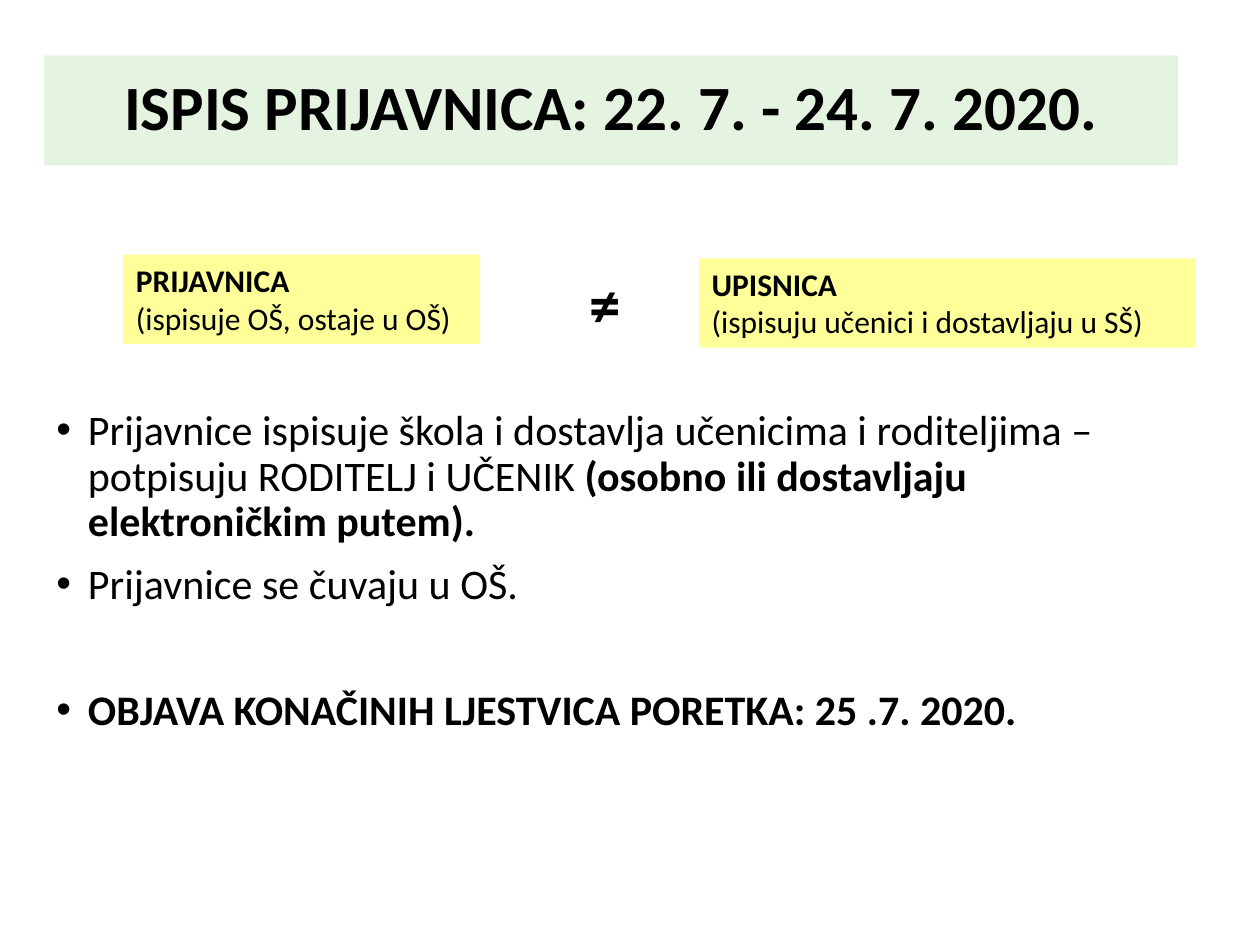
import pptx
import pptx.dml.color
import pptx.enum.shapes
import pptx.enum.text
import pptx.oxml
import pptx.oxml.ns
import pptx.util

BLACK = pptx.dml.color.RGBColor(0x00, 0x00, 0x00)
PALE_GREEN = pptx.dml.color.RGBColor(0xE5, 0xF4, 0xE0)
PALE_YELLOW = pptx.dml.color.RGBColor(0xFF, 0xFF, 0x99)

COLUMNS, ROWS = 100, 75
LEFT, WIDTH = 3.5, 90  # shared by the title and the bullet list


class Page:
    """Style and current slide; places are (column, row, columns, rows)."""

    font_name = "Calibri"
    line_spacing = 0.9

    def __init__(self, deck):
        self.slide = deck.slides.add_slide(deck.slide_layouts[6])
        self.column = deck.slide_width / COLUMNS
        self.row = deck.slide_height / ROWS

    def measure(self, place):
        units = (self.column, self.row) * 2
        return [round(length * unit) for length, unit in zip(place, units)]

    def fill_paragraph(self, paragraph, runs, size):
        """Fill a paragraph with (wording, bold) runs."""
        paragraph.font.name = self.font_name
        paragraph.font.size = pptx.util.Pt(size)
        paragraph.font.color.rgb = BLACK
        if len(runs) == 1:
            paragraph.font.bold = runs[0][1]
        for wording, bold in runs:
            run = paragraph.add_run()
            run.text = wording
            if len(runs) > 1:
                run.font.bold = bold

    def fill_frame(self, frame, paragraphs, size, align):
        frame.word_wrap = True
        for index, runs in enumerate(paragraphs):
            paragraph = frame.add_paragraph() if index else frame.paragraphs[0]
            paragraph.alignment = align
            self.fill_paragraph(paragraph, runs, size)

    def panel(self, place, color, paragraphs, size,
              align=pptx.enum.text.PP_ALIGN.LEFT,
              anchor=pptx.enum.text.MSO_ANCHOR.TOP):
        box = self.slide.shapes.add_shape(
            pptx.enum.shapes.MSO_SHAPE.RECTANGLE, *self.measure(place))
        box.shadow.inherit = False
        box.fill.solid()
        box.fill.fore_color.rgb = color
        box.line.fill.background()
        box.text_frame.vertical_anchor = anchor
        self.fill_frame(box.text_frame, paragraphs, size, align)
        return box

    def text(self, place, paragraphs, size):
        box = self.slide.shapes.add_textbox(*self.measure(place))
        self.fill_frame(box.text_frame, paragraphs, size,
                        pptx.enum.text.PP_ALIGN.LEFT)
        return box

    def bullets(self, place, items, size):
        """Each item is (space before in points, runs)."""
        box = self.text(place, [runs for _, runs in items], size)
        indent = pptx.util.Inches(0.25)
        for paragraph, (gap, _) in zip(box.text_frame.paragraphs, items):
            paragraph.line_spacing = self.line_spacing
            paragraph.space_before = pptx.util.Pt(gap)
            # Hanging bullet
            properties = paragraph._p.get_or_add_pPr()
            properties.set("marL", str(indent))
            properties.set("indent", str(-indent))
            marks = (("a:buFont", "typeface", "Arial"), ("a:buChar", "char", "•"))
            following = properties.find(pptx.oxml.ns.qn("a:defRPr"))
            for tag, key, value in marks:
                mark = pptx.oxml.parse_xml(
                    f'<{tag} {pptx.oxml.ns.nsdecls("a")} {key}="{value}"/>')
                following.addprevious(mark)


def main():
    deck = pptx.Presentation()
    deck.slide_width = pptx.util.Inches(10)
    deck.slide_height = pptx.util.Inches(7.5)
    page = Page(deck)

    # Title band
    title = page.panel((LEFT, 4.4, WIDTH, 8.7), PALE_GREEN,
                       [[("ISPIS PRIJAVNICA: 22. 7. - 24. 7. 2020.", True)]], 36,
                       pptx.enum.text.PP_ALIGN.CENTER,
                       pptx.enum.text.MSO_ANCHOR.MIDDLE)
    title.text_frame.paragraphs[0].line_spacing = page.line_spacing

    # Procedure
    page.bullets((LEFT, 32, WIDTH, 32.3), [
        (10, [("Prijavnice ispisuje škola i dostavlja učenicima i roditeljima – "
               "potpisuju RODITELJ i UČENIK ", False),
              ("(osobno ili dostavljaju elektroničkim putem).", True)]),
        (10, [("Prijavnice se čuvaju u OŠ.", False)]),
        (46, [("OBJAVA KONAČINIH LJESTVICA PORETKA: 25 .7. 2020.", True)]),
    ], 24)

    # The two forms and the sign between them
    forms = [
        ((9.8, 20.2, 28.3, 7.1), "PRIJAVNICA", "(ispisuje OŠ, ostaje u OŠ)"),
        ((55.5, 20.5, 39.4, 7.1), "UPISNICA",
         "(ispisuju učenici i dostavljaju u SŠ)"),
    ]
    for place, form, handling in forms:
        page.panel(place, PALE_YELLOW, [[(form, True)], [(handling, False)]], 18)
    page.text((45.8, 20.5, 5.5, 7.1), [[("≠", True)]], 36)

    deck.save("out.pptx")


if __name__ == "__main__":
    main()
